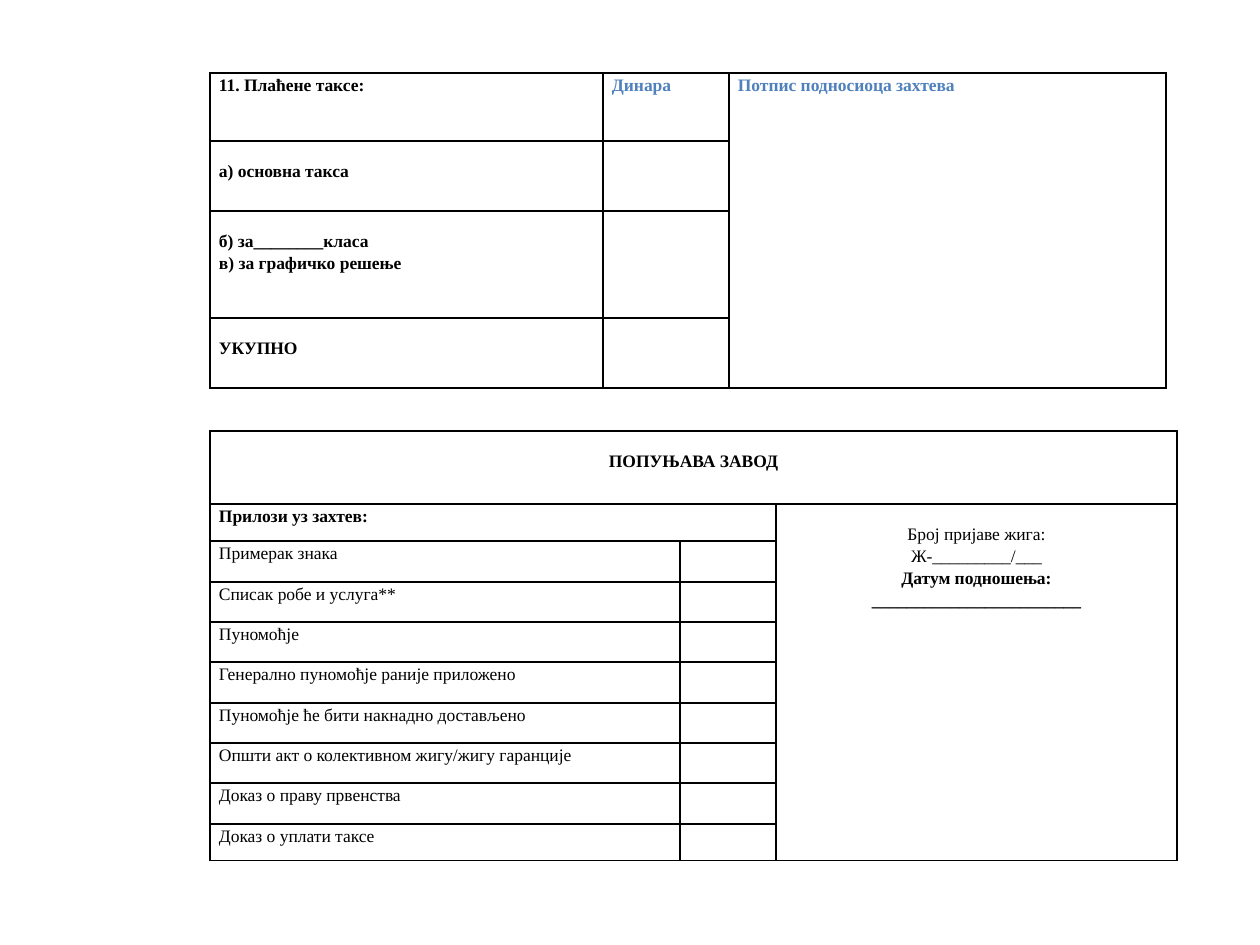
import pptx
import pptx.util
import pptx.dml.color
import pptx.enum.text
import pptx.oxml.ns
import lxml.etree

PX = 914400 / 126
COLORS = {"ink": "000000", "accent": "4F81BD"}
FONT = "Times New Roman"
BLANK_LINE = 18


def add_grid(slide, left, top, widths, heights, merges):
    frame = slide.shapes.add_table(
        len(heights), len(widths), round(left * PX), round(top * PX),
        round(sum(widths) * PX), round(sum(heights) * PX))
    table = frame.table
    table.first_row = False
    table.horz_banding = False
    for column, width in zip(table.columns, widths):
        column.width = round(width * PX)
    for row, height in zip(table.rows, heights):
        row.height = round(height * PX)
    for cell in table.iter_cells():
        cell.margin_left = cell.margin_right = round(9 * PX)
        cell.margin_top = cell.margin_bottom = 0
        properties = cell._tc.get_or_add_tcPr()
        for side in ("lnL", "lnR", "lnT", "lnB"):
            line = lxml.etree.SubElement(properties, pptx.oxml.ns.qn("a:" + side), w="12700")
            fill = lxml.etree.SubElement(line, pptx.oxml.ns.qn("a:solidFill"))
            lxml.etree.SubElement(fill, pptx.oxml.ns.qn("a:srgbClr"), val=COLORS["ink"])
        cell.fill.background()
        cell.text_frame.paragraphs[0]._p.get_or_add_endParaRPr().set("sz", "1000")
    for first, last in merges:
        table.cell(*first).merge(table.cell(*last))
    return table


def write(cell, text, bold=True, color="ink", centered=False, offset=0):
    cell.margin_top = round(offset * PX)
    cell.text_frame.text = text
    for para in cell.text_frame.paragraphs:
        para.line_spacing = 1.15
        if centered:
            para.alignment = pptx.enum.text.PP_ALIGN.CENTER
        for span in para.runs:
            span.font.name = FONT
            span.font.size = pptx.util.Pt(10)
            span.font.bold = bold
            span.font.color.rgb = pptx.dml.color.RGBColor.from_string(COLORS[color])


deck = pptx.Presentation()
deck.slide_width = round(1260 * PX)
deck.slide_height = round(945 * PX)
page = deck.slides.add_slide(deck.slide_layouts[6])

fees = add_grid(page, 210, 73, (393, 126, 437), (68, 70, 107, 70), [((0, 2), (3, 2))])
write(fees.cell(0, 0), "11. Плаћене таксе:")
write(fees.cell(0, 1), "Динара", color="accent")
write(fees.cell(0, 2), "Потпис подносиоца захтева", color="accent")
fee_lines = ("а) основна такса", "б) за________класа\nв) за графичко решење", "УКУПНО")
for number, text in enumerate(fee_lines, 1):
    write(fees.cell(number, 0), text, offset=BLANK_LINE)

office = add_grid(
    page, 210, 431, (470, 96, 401), (73, 37) + (41, 40, 40) * 2 + (41, 37),
    [((0, 0), (0, 2)), ((1, 0), (1, 1)), ((1, 2), (9, 2))])
write(office.cell(0, 0), "ПОПУЊАВА ЗАВОД", centered=True, offset=BLANK_LINE)
write(office.cell(1, 0), "Прилози уз захтев:")
attachments = (
    "Примерак знака",
    "Списак робе и услуга**",
    "Пуномоћје",
    "Генерално пуномоћје раније приложено",
    "Пуномоћје ће бити накнадно достављено",
    "Општи акт о колективном жигу/жигу гаранције",
    "Доказ о праву првенства",
    "Доказ о уплати таксе",
)
for number, text in enumerate(attachments, 2):
    write(office.cell(number, 0), text, bold=False)

filing = office.cell(1, 2)
filing_lines = ("Број пријаве жига:", "Ж-_________/___", "Датум подношења:", "_" * 24)
write(filing, "\n".join(filing_lines), centered=True, offset=BLANK_LINE)
for para in filing.text_frame.paragraphs[:2]:
    para.runs[0].font.bold = False

deck.save("out.pptx")
